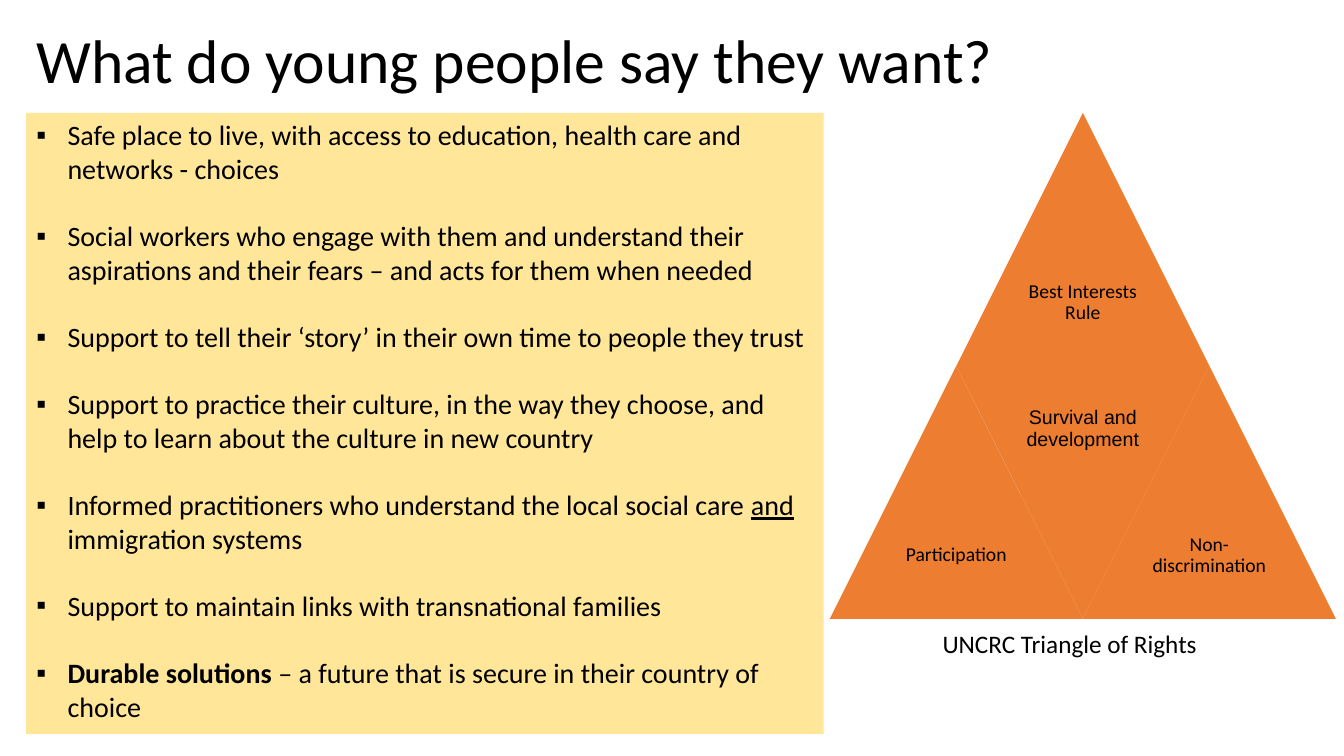
from lxml import etree
from pptx import Presentation
from pptx.dml.color import RGBColor
from pptx.enum.shapes import MSO_SHAPE
from pptx.enum.text import MSO_ANCHOR, MSO_AUTO_SIZE, PP_ALIGN
from pptx.oxml.ns import qn
from pptx.util import Inches, Pt

BLACK = RGBColor(0x00, 0x00, 0x00)
CREAM = RGBColor(0xFF, 0xE6, 0x99)
ORANGE = RGBColor(0xED, 0x7D, 0x31)

TITLE = "What do young people say they want?"
# Each wish is a list of (text, style) runs.
WISHES = [
    [("Safe place to live, with access to education, health care and networks - choices", "")],
    [("Social workers who engage with them and understand their aspirations and their fears "
      "– and acts for them when needed", "")],
    [("Support to tell their ‘story’ in their own time to people they trust", "")],
    [("Support to practice their culture, in the way they choose, and help to learn about "
      "the culture in new country", "")],
    [("Informed practitioners who understand the local social care ", ""),
     ("and", "underline"), (" immigration systems", "")],
    [("Support to maintain links with transnational families", "")],
    [("Durable solutions ", "bold"),
     ("– a future that is secure in their country of choice", "")],
]

TRIANGLE_LEFT, TRIANGLE_TOP, SIDE = 8.23, 1.12, 2.51
# Label, column in half sides, row in sides, points down, font
RIGHTS = [
    ("Best Interests Rule", 1, 0, False, "Calibri"),
    ("Participation", 0, 1, False, "Calibri"),
    ("Survival and development", 1, 1, True, "Arial"),
    ("Non-discrimination", 2, 1, False, "Calibri"),
]


def place(shape, left, top, width, height):
    shape.left, shape.top = Inches(left), Inches(top)
    shape.width, shape.height = Inches(width), Inches(height)


def format_run(run, size, font="Calibri"):
    run.font.size = Pt(size)
    run.font.name = font
    run.font.color.rgb = BLACK


def set_bullet(paragraph, character, indent):
    properties = paragraph._p.get_or_add_pPr()
    properties.set("marL", str(Inches(indent)))
    properties.set("indent", str(-Inches(indent)))
    etree.SubElement(properties, qn("a:buFont")).set("typeface", "Arial")
    etree.SubElement(properties, qn("a:buChar")).set("char", character)


def add_title(slide):
    title = slide.shapes.title
    place(title, 0.26, -0.01, 13.33 - 0.26, 1.28)
    frame = title.text_frame
    frame.text = TITLE
    frame.auto_size = MSO_AUTO_SIZE.NONE
    frame.vertical_anchor = MSO_ANCHOR.MIDDLE
    paragraph = frame.paragraphs[0]
    paragraph.alignment = PP_ALIGN.LEFT
    paragraph.line_spacing = 0.9
    format_run(paragraph.runs[0], 44)


def add_wishes(slide):
    body = slide.placeholders[1]
    place(body, 0.26, 1.12, 7.91, 6.16)
    body.fill.solid()
    body.fill.fore_color.rgb = CREAM
    frame = body.text_frame
    frame.auto_size = MSO_AUTO_SIZE.NONE
    frame.vertical_anchor = MSO_ANCHOR.TOP
    for index, wish in enumerate(WISHES):
        paragraph = frame.add_paragraph() if index else frame.paragraphs[0]
        paragraph.line_spacing = 1.0
        paragraph.space_before = Pt(24 if index else 0)
        set_bullet(paragraph, "▪", 0.31)
        for text, style in wish:
            run = paragraph.add_run()
            run.text = text
            format_run(run, 20)
            run.font.bold = style == "bold"
            run.font.underline = style == "underline"


def add_triangle(shapes, left, top, points_down):
    triangle = shapes.add_shape(MSO_SHAPE.ISOSCELES_TRIANGLE, Inches(left), Inches(top),
                                Inches(SIDE), Inches(SIDE))
    triangle.rotation = 180 if points_down else 0
    triangle.shadow.inherit = False
    triangle.fill.solid()
    triangle.fill.fore_color.rgb = ORANGE
    triangle.line.fill.background()


def add_label(shapes, text, left, top, width, height, size, font="Calibri"):
    label = shapes.add_textbox(Inches(left), Inches(top), Inches(width), Inches(height))
    frame = label.text_frame
    frame.text = text
    frame.word_wrap = True
    format_run(frame.paragraphs[0].runs[0], size, font)
    return frame


def add_rights_triangle(slide):
    shapes = slide.shapes.add_group_shape().shapes
    for text, column, row, points_down, font in RIGHTS:
        left = TRIANGLE_LEFT + column * SIDE / 2
        top = TRIANGLE_TOP + row * SIDE
        add_triangle(shapes, left, top, points_down)
        label_top = top if points_down else top + SIDE / 2
        frame = add_label(shapes, text, left + SIDE / 4, label_top, SIDE / 2, SIDE / 2, 14, font)
        frame.vertical_anchor = MSO_ANCHOR.MIDDLE
        frame.margin_left = frame.margin_right = Inches(0.06)
        frame.margin_top = frame.margin_bottom = Inches(0.06)
        frame.paragraphs[0].alignment = PP_ALIGN.CENTER
        frame.paragraphs[0].line_spacing = 0.9


def main():
    presentation = Presentation()
    presentation.slide_width, presentation.slide_height = Inches(13.33), Inches(7.5)
    slide = presentation.slides.add_slide(presentation.slide_layouts[1])
    add_title(slide)
    add_wishes(slide)
    add_rights_triangle(slide)
    add_label(slide.shapes, "UNCRC Triangle of Rights", 9.25, 6.18, 3, 0.4, 18)
    presentation.save("out.pptx")


if __name__ == "__main__":
    main()
